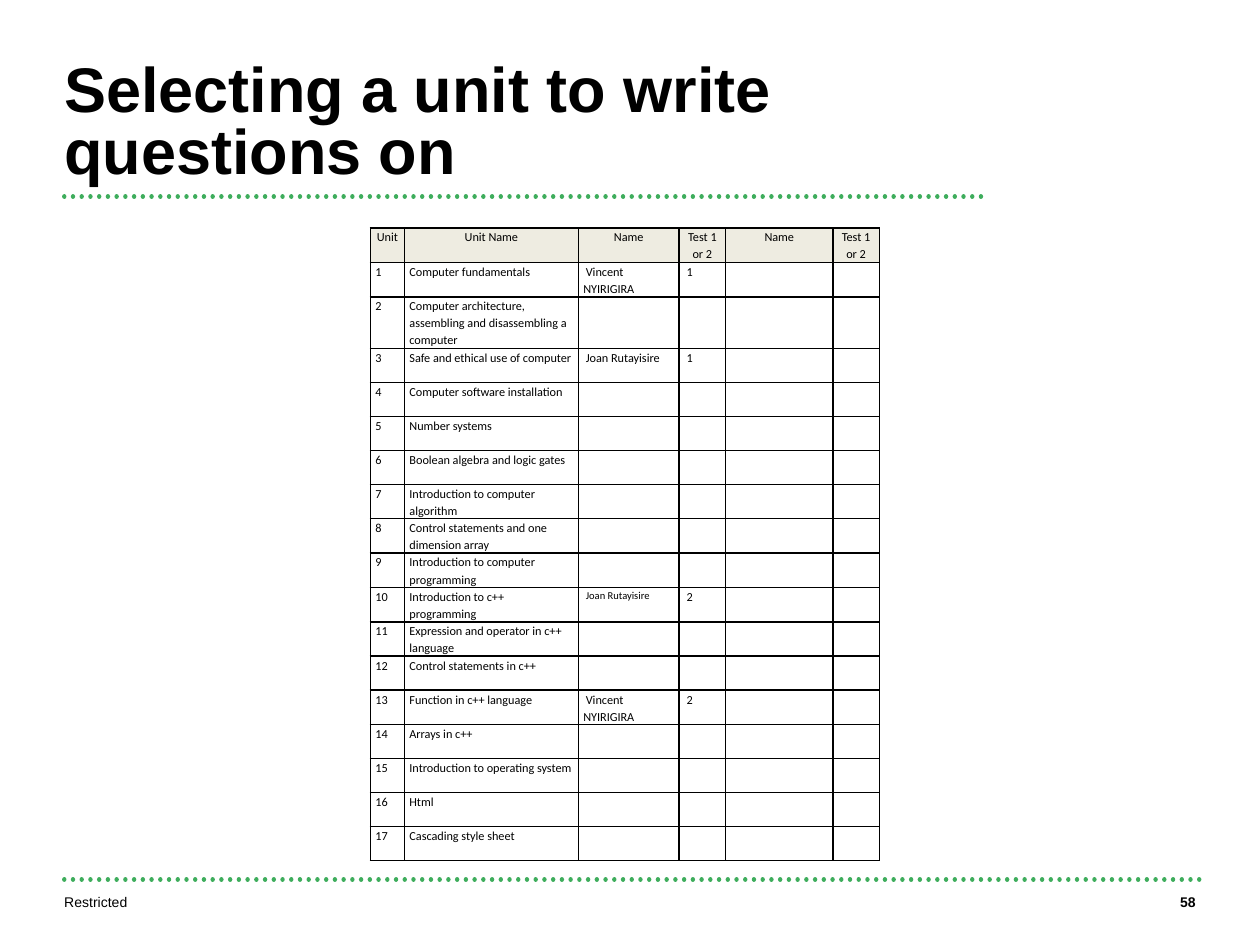
"""Build the slide that assigns question writers to course units."""
from dataclasses import dataclass

from lxml.etree import SubElement
from pptx import Presentation
from pptx.dml.color import RGBColor
from pptx.enum.dml import MSO_LINE
from pptx.enum.shapes import MSO_CONNECTOR
from pptx.enum.text import MSO_ANCHOR, MSO_AUTO_SIZE, PP_ALIGN as Align
from pptx.oxml.ns import qn
from pptx.util import Inches, Pt

COLORS = {"ink": "000000", "rule": "3EAD5C", "header": "EEECE1"}
HEADERS = ["Unit", "Unit Name", "Name", "Test 1 or 2", "Name", "Test 1 or 2"]
COLUMN_WIDTHS = [0.27, 1.38, 0.8, 0.37, 0.85, 0.37]
ROW_HEIGHT, TALL_ROW_HEIGHT = 0.27, 0.41
TALL_UNIT = 2
WRITER_COLUMNS = (2, 3)
NBSP_INDENT = 0.02


@dataclass
class Unit:
    name: str
    writer: str = ""
    test: str = ""
    writer_size: float = 7


@dataclass
class Rule:
    y: float
    right: float
    left: float = 0.51


@dataclass
class Footer:
    text: str
    left: float
    width: float
    align: Align
    bold: bool = False


UNITS = [
    Unit("Computer fundamentals", "Vincent NYIRIGIRA", "1"),
    Unit("Computer architecture, assembling and disassembling a computer"),
    Unit("Safe and ethical use of computer", "Joan Rutayisire", "1"),
    Unit("Computer software installation"),
    Unit("Number systems"),
    Unit("Boolean algebra and logic gates"),
    Unit("Introduction to computer algorithm"),
    Unit("Control statements and one dimension array"),
    Unit("Introduction to computer programming"),
    Unit("Introduction to c++ programming", "Joan Rutayisire", "2", 6),
    Unit("Expression and operator in c++ language"),
    Unit("Control statements in c++"),
    Unit("Function in c++ language", "Vincent NYIRIGIRA", "2"),
    Unit("Arrays in c++"),
    Unit("Introduction to operating system"),
    Unit("Html"),
    Unit("Cascading style sheet"),
]
RULES = [Rule(6.98, 9.53), Rule(1.56, 7.8)]
FOOTERS = [
    Footer("Restricted", 0.51, 6, Align.LEFT),
    Footer("58", 8.94, 0.55, Align.RIGHT, True),
]


def rgb(key: str) -> RGBColor:
    return RGBColor.from_string(COLORS[key])


def style_runs(paragraph, size: float, font: str, bold: bool = False) -> None:
    for run in paragraph.runs:
        run.font.size = Pt(size)
        run.font.name = font
        run.font.bold = bold
        run.font.color.rgb = rgb("ink")


def clear_margins(frame) -> None:
    frame.margin_left = frame.margin_right = 0
    frame.margin_top = frame.margin_bottom = 0
    frame.word_wrap = True
    frame.vertical_anchor = MSO_ANCHOR.TOP


def add_rule(slide, rule: Rule) -> None:
    y = Inches(rule.y)
    dots = slide.shapes.add_connector(
        MSO_CONNECTOR.STRAIGHT, Inches(rule.left), y, Inches(rule.right), y)
    dots.line.color.rgb = rgb("rule")
    dots.line.width = Pt(2.5)
    dots.line.dash_style = MSO_LINE.ROUND_DOT
    properties = dots._element.spPr
    properties.find(qn("a:ln")).set("cap", "rnd")
    SubElement(properties, qn("a:effectLst"))


def format_title(title) -> None:
    title.left, title.top = Inches(0.51), Inches(0.51)
    title.width, title.height = Inches(7.29), Inches(0.98)
    frame = title.text_frame
    frame.text = "Selecting a unit to write questions on"
    clear_margins(frame)
    frame.auto_size = MSO_AUTO_SIZE.NONE
    heading = frame.paragraphs[0]
    heading.alignment = Align.LEFT
    heading.line_spacing = Pt(35)
    style_runs(heading, 36, "Arial", True)


def add_borders(cell) -> None:
    properties = cell._tc.get_or_add_tcPr()
    for side in ("lnL", "lnR", "lnT", "lnB"):
        border = SubElement(properties, qn(f"a:{side}"), w=str(Pt(1)))
        fill = SubElement(border, qn("a:solidFill"))
        SubElement(fill, qn("a:srgbClr"), val=COLORS["ink"])


def fill_cell(cell, text: str, size: float = 7, header: bool = False,
              indent: float = 0) -> None:
    cell.margin_left = cell.margin_right = Inches(0.04)
    cell.margin_top = cell.margin_bottom = 0
    add_borders(cell)
    if header:
        cell.fill.solid()
        cell.fill.fore_color.rgb = rgb("header")
    else:
        cell.fill.background()
    entry = cell.text_frame.paragraphs[0]
    entry.text = text
    entry.alignment = Align.CENTER if header else Align.LEFT
    entry.line_spacing = 1.15
    if indent:
        entry._p.get_or_add_pPr().set("indent", str(Inches(indent)))
    style_runs(entry, size, "Calibri")
    if not text:
        SubElement(entry._p, qn("a:endParaRPr"), sz=str(int(size * 100)))


def add_unit_table(slide) -> None:
    heights = [ROW_HEIGHT] * (len(UNITS) + 1)
    heights[TALL_UNIT] = TALL_ROW_HEIGHT
    table = slide.shapes.add_table(
        len(heights), len(HEADERS), Inches(2.94), Inches(1.81),
        Inches(sum(COLUMN_WIDTHS)), Inches(sum(heights))).table
    table.first_row = table.horz_banding = False
    for column, width in zip(table.columns, COLUMN_WIDTHS):
        column.width = Inches(width)
    for row, height in zip(table.rows, heights):
        row.height = Inches(height)
    for column, heading in enumerate(HEADERS):
        fill_cell(table.cell(0, column), heading, header=True)
    for number, unit in enumerate(UNITS, start=1):
        entries = [str(number), unit.name, unit.writer, unit.test, "", ""]
        for column, entry in enumerate(entries):
            size = unit.writer_size if column == WRITER_COLUMNS[0] else 7
            indent = NBSP_INDENT if column in WRITER_COLUMNS else 0
            fill_cell(table.cell(number, column), entry, size, indent=indent)


def add_footer(slide, footer: Footer) -> None:
    frame = slide.shapes.add_textbox(
        Inches(footer.left), Inches(7.09),
        Inches(footer.width), Inches(0.28)).text_frame
    clear_margins(frame)
    frame.text = footer.text
    frame.paragraphs[0].alignment = footer.align
    style_runs(frame.paragraphs[0], 8, "Arial", footer.bold)


def main() -> None:
    deck = Presentation()
    deck.slide_width, deck.slide_height = Inches(10), Inches(7.5)
    slide = deck.slides.add_slide(deck.slide_layouts[5])
    for rule in RULES:
        add_rule(slide, rule)
    format_title(slide.shapes.title)
    add_unit_table(slide)
    for footer in FOOTERS:
        add_footer(slide, footer)
    deck.save("out.pptx")


if __name__ == "__main__":
    main()
